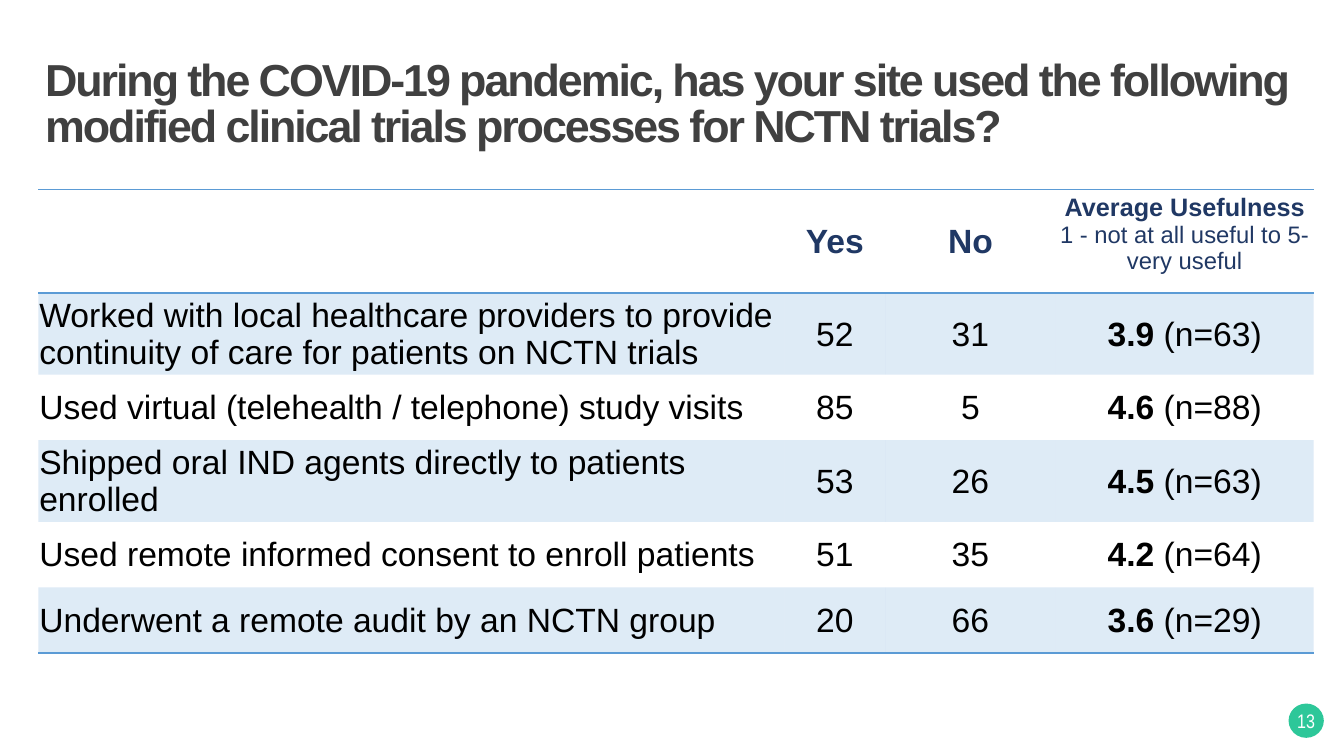
"""Build a slide with a table on modified clinical trials processes."""
from lxml import etree
from pptx import Presentation
from pptx import util as u
from pptx.dml.color import RGBColor
from pptx.enum import shapes, text
from pptx.oxml.ns import qn

TITLE = ("During the COVID-19 pandemic, has your site used the following "
         "modified clinical trials processes for NCTN trials?")
SCALE = "1 - not at all useful to 5- very useful"
PROCESSES = [
    ("Worked with local healthcare providers to provide continuity of care "
     "for patients on NCTN trials", 52, 31, "3.9", 63),
    ("Used virtual (telehealth / telephone) study visits", 85, 5, "4.6", 88),
    ("Shipped oral IND agents directly to patients enrolled", 53, 26, "4.5", 63),
    ("Used remote informed consent to enroll patients", 51, 35, "4.2", 64),
    ("Underwent a remote audit by an NCTN group", 20, 66, "3.6", 29),
]
COLUMN_WIDTHS = [7.4, 1, 1.69, 2.56]
ROW_HEIGHTS = [0.97, 0.75, 0.65, 0.75, 0.65, 0.65]
NO_STYLE = "{2D5ABB26-0587-4C30-8999-92F81FD0307C}"


def color(value):
    return RGBColor.from_string(value)


class SlideBuilder:
    font = "Arial"
    gray = "404040"
    navy = "203864"
    black = "000000"
    white = "FFFFFF"
    blue = "5B9BD5"
    green = "2DC799"

    def __init__(self, slide):
        self.slide = slide

    def style(self, font, size, ink, bold=False, name=None):
        font.name = name or self.font
        font.size = u.Pt(size)
        font.color.rgb = color(ink)
        font.bold = bold

    def title(self, wording, left, top, width, height):
        box = self.slide.shapes.add_textbox(
            u.Inches(left), u.Inches(top), u.Inches(width), u.Inches(height))
        frame = box.text_frame
        frame.word_wrap = True
        frame.vertical_anchor = text.MSO_ANCHOR.BOTTOM
        paragraph = frame.paragraphs[0]
        paragraph.line_spacing = 0.85
        run = paragraph.add_run()
        run.text = wording
        run.font._element.set("spc", "-150")
        self.style(paragraph.font, 32, self.gray, True)

    def page_number(self, number, left, top, width, height):
        shape = self.slide.shapes.add_shape(
            shapes.MSO_SHAPE.OVAL, u.Inches(left), u.Inches(top),
            u.Inches(width), u.Inches(height))
        shape.shadow.inherit = False
        shape.fill.solid()
        shape.fill.fore_color.rgb = color(self.green)
        shape.line.fill.background()
        frame = shape.text_frame
        frame.word_wrap = False
        frame.vertical_anchor = text.MSO_ANCHOR.MIDDLE
        paragraph = frame.paragraphs[0]
        paragraph.text = str(number)
        paragraph.alignment = text.PP_ALIGN.CENTER
        self.style(paragraph.font, 14, self.white, name="Arial Narrow")

    def table(self, left, top, widths, heights):
        frame = self.slide.shapes.add_table(
            len(heights), len(widths), u.Inches(left), u.Inches(top),
            u.Inches(sum(widths)), u.Inches(sum(heights)))
        table = frame.table
        table.horz_banding = False
        table._tbl.tblPr.find(qn("a:tableStyleId")).text = NO_STYLE
        for column, width in zip(table.columns, widths):
            column.width = u.Inches(width)
        for row, height in zip(table.rows, heights):
            row.height = u.Inches(height)
        for index, row in enumerate(table.rows):
            edges = {0: ["lnT", "lnB"], len(heights) - 1: ["lnB"]}.get(index, [])
            for cell in row.cells:
                self.cell_frame(cell, edges, shaded=index % 2 == 1)
        return table

    def cell_frame(self, cell, edges, shaded):
        cell.vertical_anchor = text.MSO_ANCHOR.MIDDLE
        cell.margin_left = cell.margin_right = cell.margin_top = u.Inches(0.01)
        cell.margin_bottom = 0
        properties = cell._tc.get_or_add_tcPr()
        for edge in edges:
            line = etree.SubElement(properties, qn(f"a:{edge}"), w=str(u.Pt(1)))
            fill = etree.SubElement(line, qn("a:solidFill"))
            etree.SubElement(fill, qn("a:srgbClr"), val=self.blue)
        if not shaded:
            cell.fill.background()
            return
        cell.fill.solid()
        cell.fill.fore_color.rgb = color(self.blue)
        tint = properties.find(qn("a:solidFill")).find(qn("a:srgbClr"))
        etree.SubElement(tint, qn("a:alpha"), val="20000")

    def cell_text(self, cell, wording, size, ink, bold=False, centered=True, after=0):
        frame = cell.text_frame
        paragraph = frame.add_paragraph() if frame.text else frame.paragraphs[0]
        paragraph.text = wording
        paragraph.space_after = u.Pt(after)
        if centered:
            paragraph.alignment = text.PP_ALIGN.CENTER
        self.style(paragraph.font, size, ink, bold)
        return paragraph

    def header(self, cells):
        blank, yes, no, usefulness = cells
        self.cell_text(yes, "Yes", 24, self.navy, True)
        self.cell_text(no, "No", 24, self.navy, True)
        self.cell_text(usefulness, "Average Usefulness", 18, self.navy, True)
        self.cell_text(usefulness, SCALE, 17, self.navy)
        usefulness.margin_bottom = u.Inches(0.15)

    def process(self, cells, name, yes, no, score, count):
        self.cell_text(cells[0], name, 24, self.black, centered=False, after=6)
        for cell, value in zip(cells[1:], (yes, no)):
            self.cell_text(cell, str(value), 24, self.black, after=6)
        paragraph = self.cell_text(cells[3], "", 24, self.black, after=6)
        for wording, bold in ((score, True), (f" (n={count})", False)):
            run = paragraph.add_run()
            run.text = wording
            self.style(run.font, 24, self.black, bold)


def main():
    presentation = Presentation()
    presentation.slide_width = u.Inches(13.33)
    presentation.slide_height = u.Inches(7.5)
    builder = SlideBuilder(presentation.slides.add_slide(presentation.slide_layouts[6]))
    builder.page_number(13, 12.78, 6.98, 0.35, 0.34)
    builder.title(TITLE, 0.35, 0.57, 12.7, 0.98)
    table = builder.table(0.38, 1.88, COLUMN_WIDTHS, ROW_HEIGHTS)
    header, *rows = [list(row.cells) for row in table.rows]
    builder.header(header)
    for cells, process in zip(rows, PROCESSES):
        builder.process(cells, *process)
    presentation.save("out.pptx")


if __name__ == "__main__":
    main()
